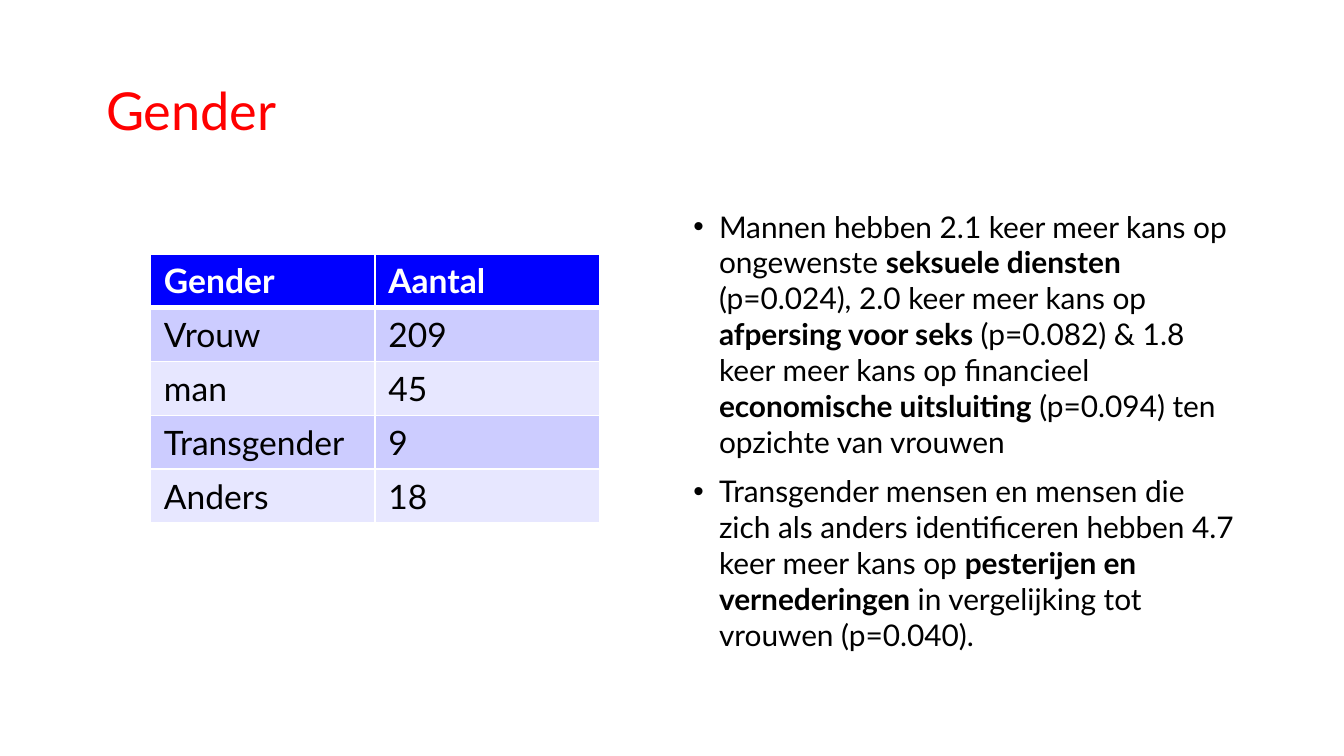
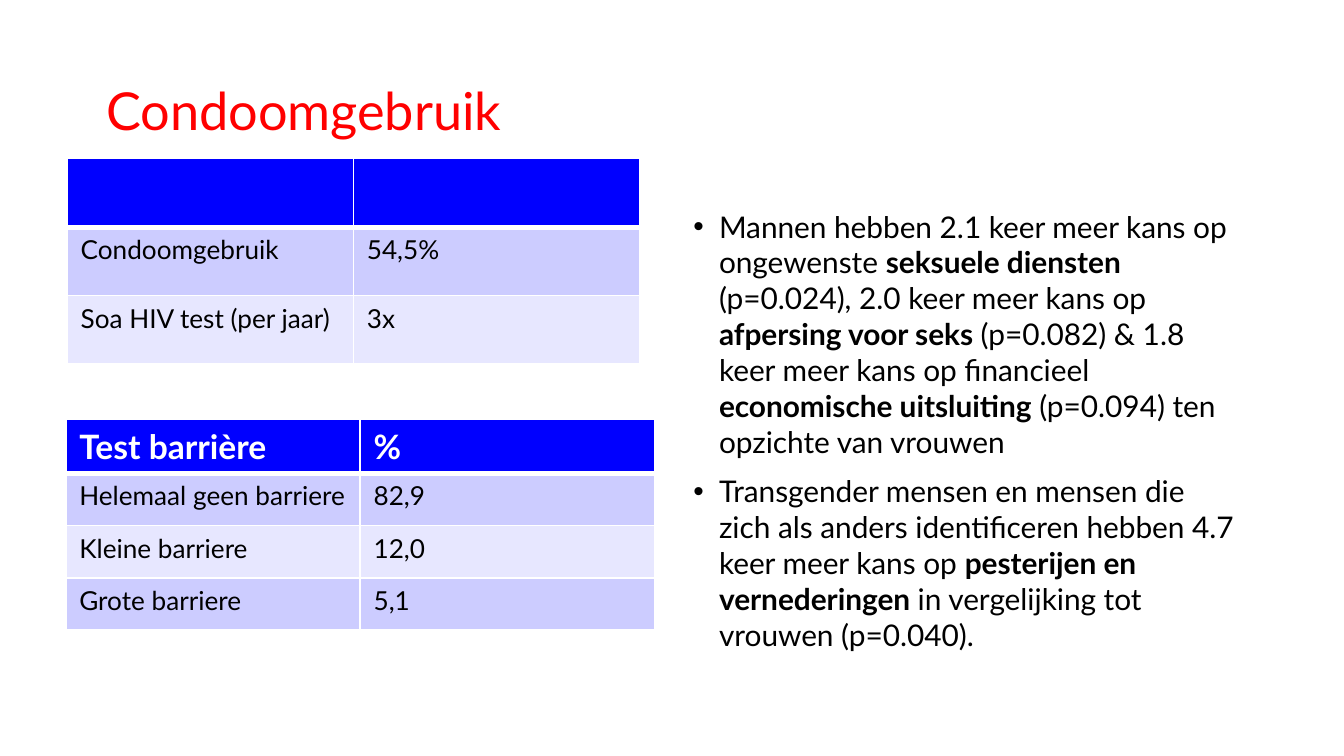
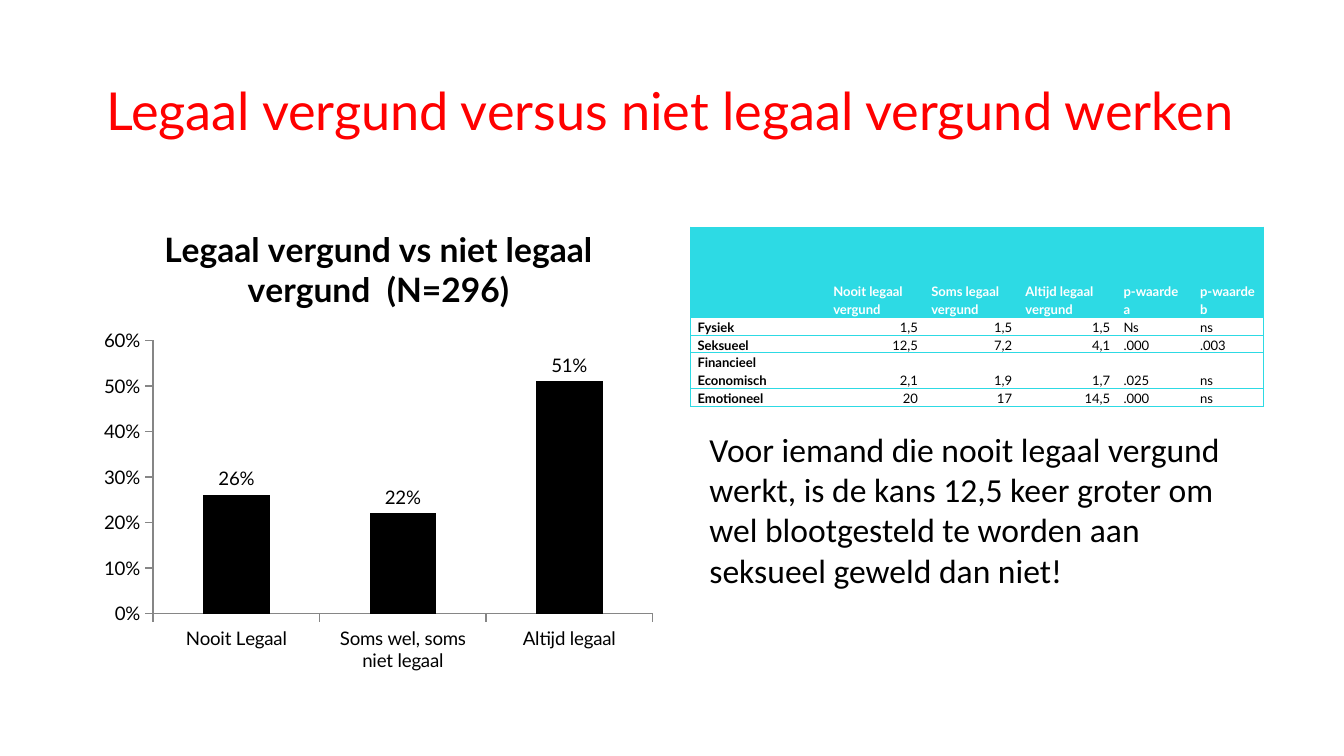
from pptx import Presentation
from pptx.chart.data import CategoryChartData
from pptx.dml.color import RGBColor
from pptx.enum.chart import XL_CHART_TYPE as Kind, XL_LABEL_POSITION as Spot
from pptx.enum.chart import XL_TICK_MARK as Tick
from pptx.enum.text import MSO_ANCHOR as Anchor, MSO_AUTO_SIZE as Fit, PP_ALIGN as Align
from pptx.oxml import parse_xml
from pptx.oxml.ns import nsdecls
from pptx.util import Inches, Pt

# Shared look
FONT = "Lato"
RED, BLUE, CYAN = "FF0000", "0000FF", "2DDAE4"
BLACK, WHITE, GREY = "000000", "FFFFFF", "868686"
BANDS = ["CCCCFF", "E7E7FF"]

# Content: odd parts of a point are bold
POINTS = [
    ["Mannen hebben 2.1 keer meer kans op ongewenste ", "seksuele diensten",
     " (p=0.024), 2.0 keer meer kans op ", "afpersing voor seks ",
     "(p=0.082) & 1.8 keer meer kans op financieel ", "economische uitsluiting ",
     "(p=0.094) ten opzichte van vrouwen"],
    ["Transgender mensen en mensen die zich als anders identificeren hebben 4.7 "
     "keer meer kans op ", "pesterijen en vernederingen ",
     "in vergelijking tot vrouwen (p=0.040)."],
]
GENDER = [("Gender", "Aantal"), ("Vrouw", "209"), ("man", "45"),
          ("Transgender", "9"), ("Anders", "18")]
HURDLES = [("Test barrière", "%"), ("Helemaal geen barriere", "82,9"),
           ("Kleine barriere", "12,0"), ("Grote barriere", "5,1")]
USAGE = [("", ""), ("Condoomgebruik", "54,5%"), ("Soa HIV test (per jaar)", "3x")]
ODDS = [
    ("", "Nooit legaal vergund", "Soms legaal vergund", "Altijd legaal vergund",
     "p-waarde a", "p-waarde b"),
    ("Fysiek", "1,5", "1,5", "1,5", "Ns", "ns"),
    ("Seksueel", "12,5", "7,2", "4,1", ".000", ".003"),
    ("Financieel Economisch", "2,1", "1,9", "1,7", ".025", "ns"),
    ("Emotioneel", "20", "17", "14,5", ".000", "ns"),
]
SHARES = {"Nooit Legaal": 0.26, "Soms wel, soms niet legaal": 0.22, "Altijd legaal": 0.51}
SHARE_TITLE = "Legaal vergund vs niet legaal vergund  (N=296)"
CLAIM = ("Voor iemand die nooit legaal vergund werkt, is de kans 12,5 keer groter om "
         "wel blootgesteld te worden aan seksueel geweld dan niet!")


def rgb(color):
    return RGBColor.from_string(color)


def style(font, size, color=BLACK, bold=False, name=FONT):
    font.name, font.size, font.bold = name, Pt(size), bold
    font.color.rgb = rgb(color)


def place(shape, left, top, width, height):
    shape.left, shape.top = Inches(left), Inches(top)
    shape.width, shape.height = Inches(width), Inches(height)


def add_slide(deck, layout, title):
    slide = deck.slides.add_slide(deck.slide_layouts[layout])
    head = slide.shapes.title
    place(head, 0.69, 0.3, 8.62, 1.09)
    frame = head.text_frame
    frame.text = title
    frame.auto_size, frame.vertical_anchor = Fit.NONE, Anchor.MIDDLE
    para = frame.paragraphs[0]
    para.alignment, para.line_spacing = Align.LEFT, 0.9
    style(para.runs[0].font, 28, RED)
    return slide


def add_points(slide):
    body = slide.placeholders[1]
    place(body, 5.06, 1.5, 4.25, 3.57)
    frame = body.text_frame
    frame.auto_size = Fit.NONE
    for i, parts in enumerate(POINTS):
        para = frame.add_paragraph() if i else frame.paragraphs[0]
        props = para._p.get_or_add_pPr()
        props.set("marL", str(Inches(0.19)))
        props.set("indent", str(-Inches(0.19)))
        para.space_before = Pt(7.5 if i else 0)
        for j, part in enumerate(parts):
            run = para.add_run()
            run.text = part
            style(run.font, 16, bold=j % 2 == 1)


def edge(cell, side, color=None, width=1):
    """Draw one side (L, R, T, B) of a cell, or clear it without a color."""
    fill = f'<a:solidFill><a:srgbClr val="{color}"/></a:solidFill>' if color else "<a:noFill/>"
    cell._tc.get_or_add_tcPr().append(parse_xml(
        f'<a:ln{side} {nsdecls("a")} w="{Pt(width)}">{fill}</a:ln{side}>'))


def add_grid(slide, rows, left, top, widths, heights):
    """Add a table and return its cells as (row, column, cell)."""
    table = slide.shapes.add_table(
        len(rows), len(widths), Inches(left), Inches(top),
        Inches(sum(widths)), Inches(sum(heights))).table
    for col, width in zip(table.columns, widths):
        col.width = Inches(width)
    for row, height in zip(table.rows, heights):
        row.height = Inches(height)
    cells = []
    for r, texts in enumerate(rows):
        for c, text in enumerate(texts):
            cell = table.cell(r, c)
            cell.text_frame.text = text
            cells.append((r, c, cell))
    return cells


def add_banded(slide, rows, left, top, width, height, size):
    cells = add_grid(slide, rows, left, top, [width] * 2, [height] * len(rows))
    for r, _, cell in cells:
        for side in "LRTB":
            thick = (r == 0 and side == "B") or (r == 1 and side == "T")
            edge(cell, side, WHITE, 3 if thick else 1)
        cell.fill.solid()
        cell.fill.fore_color.rgb = rgb(BANDS[(r - 1) % 2] if r else BLUE)
        for run in cell.text_frame.paragraphs[0].runs:
            style(run.font, size if r else 18, BLACK if r else WHITE, r == 0)


def add_odds(slide):
    widths = [1.01, 0.73, 0.7, 0.73, 0.57, 0.52]
    heights = [0.67, 0.13, 0.13, 0.26, 0.13]
    for r, c, cell in add_grid(slide, ODDS, 5.14, 1.69, widths, heights):
        edge(cell, "L", CYAN if c == 0 else None, 0.5)
        edge(cell, "R", CYAN if c == len(widths) - 1 else None, 0.5)
        edge(cell, "T", CYAN, 0.5)
        edge(cell, "B", CYAN, 0.5)
        if r:
            cell.fill.background()
        else:
            cell.fill.solid()
            cell.fill.fore_color.rgb = rgb(CYAN)
        cell.margin_left = cell.margin_right = Inches(0.05)
        cell.margin_top = cell.margin_bottom = 0
        cell.vertical_anchor = Anchor.BOTTOM
        para = cell.text_frame.paragraphs[0]
        para.line_spacing = 1.15
        para.alignment = Align.RIGHT if r and 1 <= c <= 3 else Align.LEFT
        for run in para.runs:
            style(run.font, 7, BLACK if r else WHITE, r == 0 or c == 0)


def add_shares(slide):
    data = CategoryChartData(number_format="0%")
    data.categories = list(SHARES)
    data.add_series("Series 1", list(SHARES.values()))
    chart = slide.shapes.add_chart(
        Kind.COLUMN_CLUSTERED, Inches(0.69), Inches(1.5),
        Inches(4.25), Inches(3.57), data).chart
    style(chart.font, 10)
    chart.has_legend = False
    title = chart.chart_title.text_frame
    title.text = SHARE_TITLE
    style(title.paragraphs[0].runs[0].font, 18, bold=True)
    # Axes
    for axis in (chart.category_axis, chart.value_axis):
        axis.has_major_gridlines = False
        axis.major_tick_mark, axis.minor_tick_mark = Tick.OUTSIDE, Tick.NONE
        axis.format.line.color.rgb = rgb(GREY)
    scale = chart.value_axis
    scale.minimum_scale, scale.maximum_scale, scale.major_unit = 0, 0.6, 0.1
    scale.tick_labels.number_format = "0%"
    scale.tick_labels.number_format_is_linked = False
    # Columns
    plot = chart.plots[0]
    plot.gap_width, plot.vary_by_categories = 150, False
    fill = plot.series[0].format.fill
    fill.solid()
    fill.fore_color.rgb = rgb(BLACK)
    plot.has_data_labels = True
    labels = plot.data_labels
    labels.show_value, labels.position = True, Spot.OUTSIDE_END
    labels.number_format, labels.number_format_is_linked = "0%", False
    style(labels.font, 10)


def add_claim(slide):
    box = slide.shapes.add_textbox(Inches(5.18), Inches(3.14), Inches(4.22), Inches(1.31))
    frame = box.text_frame
    frame.word_wrap, frame.auto_size = True, Fit.SHAPE_TO_FIT_TEXT
    frame.text = CLAIM
    style(frame.paragraphs[0].runs[0].font, 18, name="Calibri")


def main():
    # Widescreen, 16 to 9
    deck = Presentation()
    deck.slide_width = Inches(10)
    deck.slide_height = Inches(10) * 9 // 16

    # Gender
    slide = add_slide(deck, 1, "Gender")
    add_banded(slide, GENDER, 1.12, 1.89, 1.67, 0.36, 18)
    add_points(slide)

    # Condom use and test barriers
    slide = add_slide(deck, 1, "Condoomgebruik")
    add_points(slide)
    add_banded(slide, HURDLES, 0.49, 3.12, 2.19, 0.39, 14)
    add_banded(slide, USAGE, 0.5, 1.18, 2.13, 0.51, 14)

    # Licensed and unlicensed work
    slide = add_slide(deck, 5, "Legaal vergund versus niet legaal vergund werken")
    add_odds(slide)
    add_shares(slide)
    add_claim(slide)

    deck.save("out.pptx")


if __name__ == "__main__":
    main()
